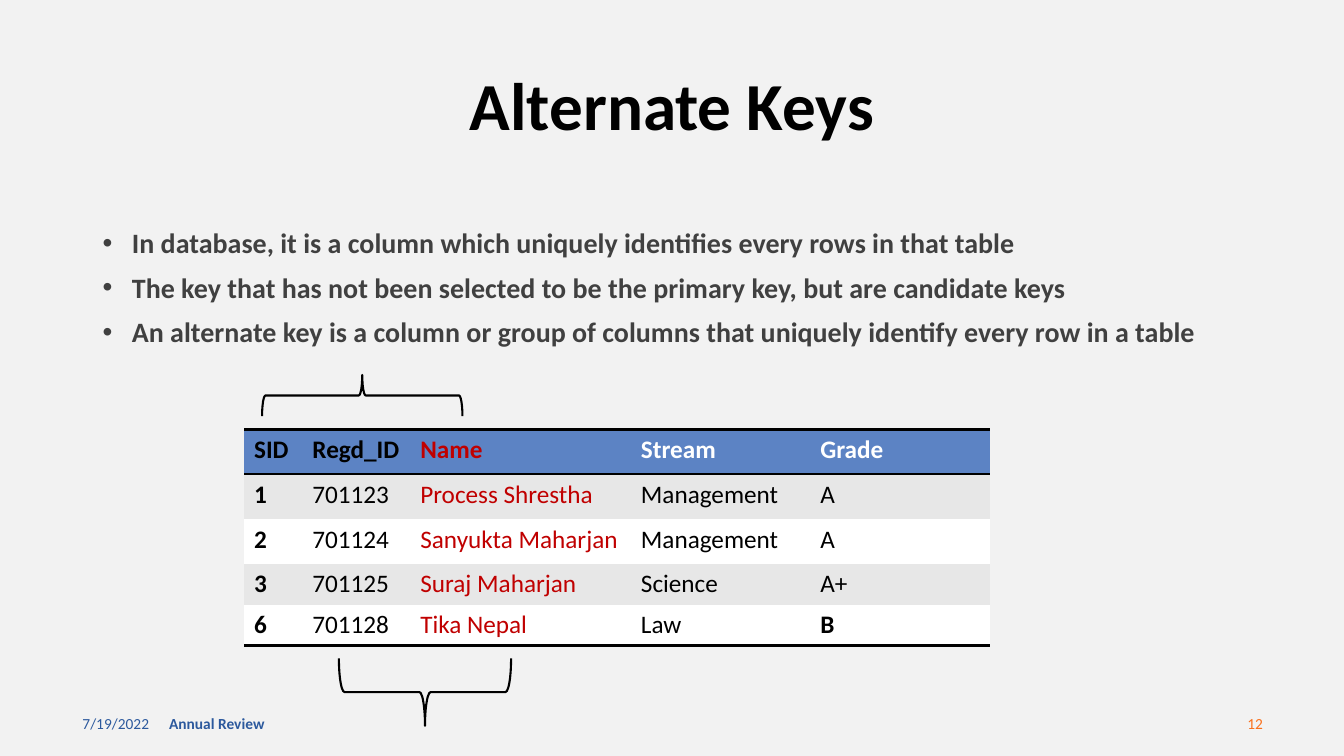
from lxml import etree
from pptx import Presentation
from pptx import util as u
from pptx.dml.color import RGBColor
from pptx.enum import shapes, text
from pptx.oxml.ns import qn

COLORS = {"bg": "F2F2F2", "black": "000000", "white": "FFFFFF", "body": "404040",
          "red": "C00000", "header": "5C83C4", "band": "E7E7E7",
          "footer": "2C599D", "number": "FA6F1A"}
NO_STYLE = "{2D5ABB26-0587-4C30-8999-92F81FD0307C}"


def rgb(name):
    return RGBColor.from_string(COLORS[name])


def box(*lengths):
    return [u.Cm(v) for v in lengths]


class SlideBuilder:
    font = "Calibri"

    def __init__(self, prs):
        self.s = prs.slides.add_slide(prs.slide_layouts[1])
        self.s.background.fill.solid()
        self.s.background.fill.fore_color.rgb = rgb("bg")

    def add_text(self, p, words, size, color, bold=False, **para):
        r = p.add_run()
        r.text = words
        fmt = {"name": self.font, "size": u.Pt(size), "bold": bold}
        for target, values in ((r.font, fmt), (p, para)):
            for key, value in values.items():
                setattr(target, key, value)
        r.font.color.rgb = rgb(color)

    def place(self, sp, at, anchor):
        sp.left, sp.top, sp.width, sp.height = box(*at)
        tf = sp.text_frame
        fmt = {"word_wrap": True, "auto_size": text.MSO_AUTO_SIZE.NONE,
               "vertical_anchor": anchor}
        for key, value in fmt.items():
            setattr(tf, key, value)
        return tf

    def title(self, words, at):
        tf = self.place(self.s.shapes.title, at, text.MSO_ANCHOR.MIDDLE)
        self.add_text(tf.paragraphs[0], words, 48, "black", True,
                      alignment=text.PP_ALIGN.CENTER, line_spacing=0.9)

    def bullets(self, items, at):
        tf = self.place(self.s.placeholders[1], at, text.MSO_ANCHOR.TOP)
        for i, item in enumerate(items):
            p = tf.add_paragraph() if i else tf.paragraphs[0]
            self.add_text(p, item, 20, "body", True,
                          line_spacing=0.9, space_before=u.Pt(10))
            pPr = p._p.get_or_add_pPr()
            pPr.set("marL", str(u.Cm(0.74)))
            pPr.set("indent", str(-u.Cm(0.74)))
            etree.SubElement(pPr, qn("a:buFont"), typeface="Arial")
            etree.SubElement(pPr, qn("a:buChar"), char="•")

    def label(self, words, at, color="footer", bold=False, align=text.PP_ALIGN.LEFT):
        sp = self.s.shapes.add_textbox(*box(*at))
        tf = self.place(sp, at, text.MSO_ANCHOR.MIDDLE)
        self.add_text(tf.paragraphs[0], words, 11, color, bold, alignment=align)

    def border(self, cell, side):
        ln = etree.SubElement(cell._tc.get_or_add_tcPr(), qn("a:" + side),
                              w=str(u.Pt(2)))
        fill = etree.SubElement(ln, qn("a:solidFill"))
        etree.SubElement(fill, qn("a:srgbClr"), val=COLORS["black"])

    def table(self, rows, at, widths, heights):
        gf = self.s.shapes.add_table(len(rows), len(widths), *box(*at))
        table = gf.table
        table._tbl.tblPr.find(qn("a:tableStyleId")).text = NO_STYLE
        for col, width in zip(table.columns, widths):
            col.width = u.Cm(width)
        last = len(rows) - 1
        for i, row in enumerate(rows):
            table.rows[i].height = u.Cm(heights[i])
            for j, words in enumerate(row):
                cell = table.cell(i, j)
                # Rules above and below the header and under the last row
                if i == 0:
                    self.border(cell, "lnT")
                if i in (0, last):
                    self.border(cell, "lnB")
                cell.fill.solid()
                cell.fill.fore_color.rgb = rgb(
                    "header" if i == 0 else "band" if i % 2 else "white")
                # Name column in red, other header cells after it in white
                color = "red" if j == 2 else "white" if i == 0 and j > 2 else "black"
                bold = i == 0 or j == 0 or (i == last and j == len(row) - 1)
                self.add_text(cell.text_frame.paragraphs[0], words, 18, color, bold)

    def brace(self, at, rotation):
        sp = self.s.shapes.add_shape(shapes.MSO_SHAPE.RIGHT_BRACE, *box(*at))
        sp.rotation = rotation
        sp.shadow.inherit = False
        sp.fill.background()
        sp.line.color.rgb = rgb("black")
        sp.line.width = u.Pt(1.5)


def main():
    prs = Presentation()
    prs.slide_width, prs.slide_height = box(33.87, 19.05)
    b = SlideBuilder(prs)

    # Footer
    b.label("7/19/2022", (1.83, 17.73, 7.62, 1.02))
    b.label("Annual Review", (4.01, 17.73, 11.43, 1.02), bold=True)
    b.label("12", (24.46, 17.73, 7.62, 1.02), "number", align=text.PP_ALIGN.RIGHT)

    # Title and definition
    b.title("Alternate Keys", (2.33, 1.75, 29.21, 1.96))
    b.bullets([
        "In database, it is a column which uniquely identifies every rows in that table",
        "The key that has not been selected to be the primary key, but are candidate keys",
        "An alternate key is a column or group of columns that uniquely identify every row in a table",
    ], (2.33, 5.66, 29.21, 11.43))

    # Student table
    b.table([
        ("SID", "Regd_ID", "Name", "Stream", "Grade"),
        ("1", "701123", "Process Shrestha", "Management", "A"),
        ("2", "701124", "Sanyukta Maharjan", "Management", "A"),
        ("3", "701125", "Suraj Maharjan", "Science", "A+"),
        ("6", "701128", "Tika Nepal", "Law", "B"),
    ], (6.15, 10.82, 18.79, 5.44), (1.47, 2.72, 5.56, 4.52, 4.52),
        (1.13, 1.13, 1.13, 0.86, 0.86))

    # Braces over and under the key columns
    b.brace((9.86, 15.27, 1.7, 4.34), 90)
    b.brace((8.61, 7.44, 1.04, 5.05), 270)

    prs.save("out.pptx")


if __name__ == "__main__":
    main()
